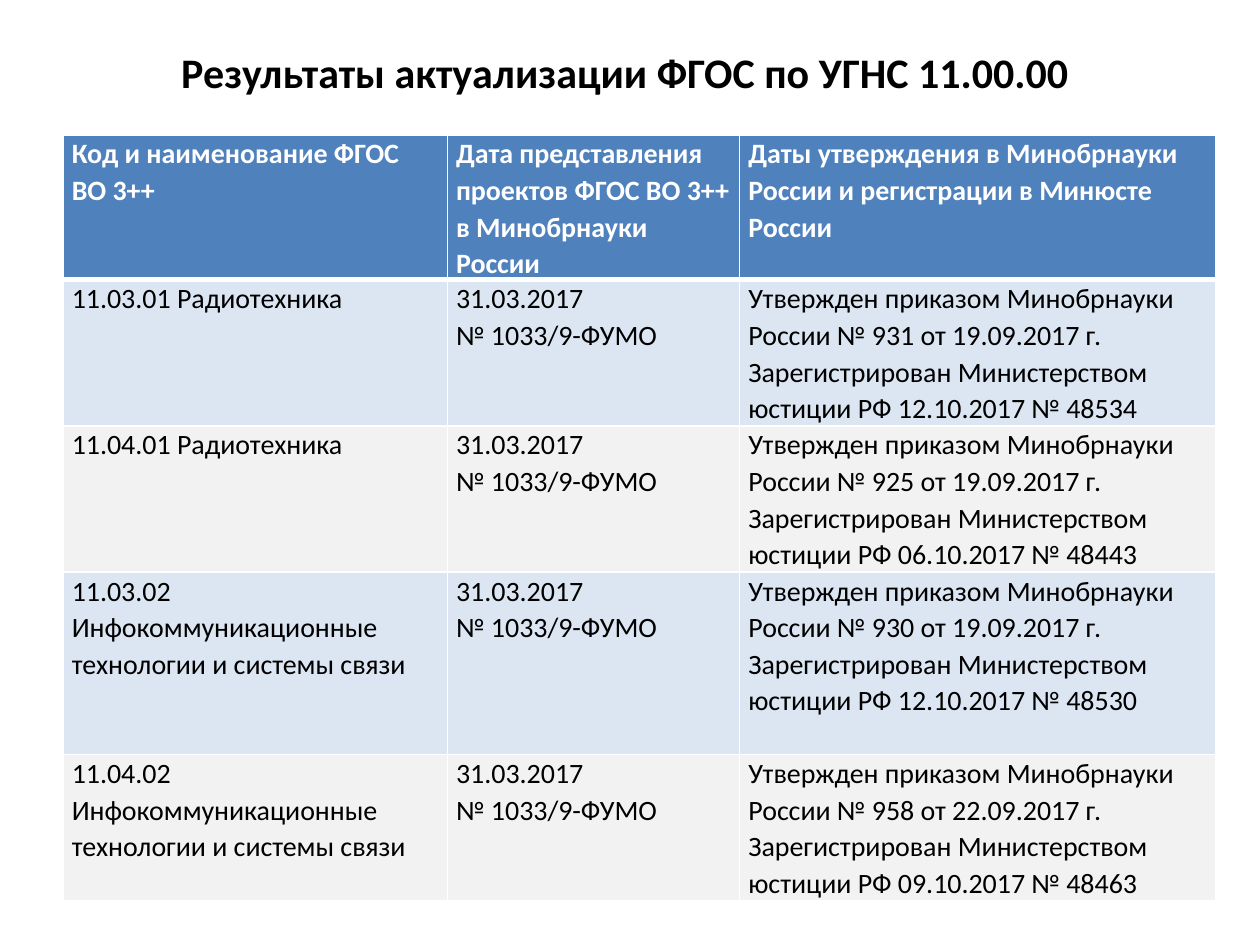
from pptx import Presentation
from pptx.dml.color import RGBColor as Color
from pptx.enum.text import MSO_ANCHOR as Anchor, PP_ALIGN as Align
from pptx.oxml import parse_xml
from pptx.oxml.ns import nsdecls
from pptx.util import Inches, Pt

# Content
TITLE = "Результаты актуализации ФГОС по УГНС 11.00.00"
HEADS = [
    "Код и наименование ФГОС ВО 3++",
    "Дата представления\nпроектов ФГОС ВО 3++ в Минобрнауки России",
    "Даты утверждения в Минобрнауки России и регистрации в Минюсте России",
]
SENT = "31.03.2017\n№ 1033/9-ФУМО"
RADIO = "Радиотехника"
COMMS = "Инфокоммуникационные технологии и системы связи"
# code, name, order, order date, entry date, entry number
ITEMS = [
    ("11.03.01", RADIO, 931, "19.09.2017", "12.10.2017", 48534),
    ("11.04.01", RADIO, 925, "19.09.2017", "06.10.2017", 48443),
    ("11.03.02", COMMS, 930, "19.09.2017", "12.10.2017", 48530),
    ("11.04.02", COMMS, 958, "22.09.2017", "09.10.2017", 48463),
]
WIDTHS = [3.05, 2.32, 3.78]
HEIGHTS = [1.15, 1.16, 1.16, 1.45, 1.16]

THEME = {
    "font": "Calibri", "title": 24, "body": 16,
    "dark": "000000", "light": "FFFFFF", "head": "4F81BD",
    "bands": ["DCE6F2", "F2F2F2"], "thin": 1, "thick": 3,
}


def style(frame, size, color, bold):
    for para in frame.paragraphs:
        for run in para.runs:
            font = run.font
            font.name, font.size, font.bold = THEME["font"], Pt(size), bold
            font.color.rgb = Color.from_string(color)


def edge(cell, side, width):
    cell._tc.get_or_add_tcPr().append(parse_xml(
        f'<a:ln{side} {nsdecls("a")} w="{Pt(width)}"><a:solidFill>'
        f'<a:srgbClr val="{THEME["light"]}"/></a:solidFill></a:ln{side}>'))


def dress(cell, text, row):
    head = row == 0
    # Borders go before the fill; a thick line parts head and body
    thick, thin = THEME["thick"], THEME["thin"]
    tops = {"L": thin, "R": thin,
            "T": thick if row == 1 else thin, "B": thick if head else thin}
    for side, width in tops.items():
        edge(cell, side, width)
    cell.fill.solid()
    fill = THEME["head"] if head else THEME["bands"][(row - 1) % 2]
    cell.fill.fore_color.rgb = Color.from_string(fill)
    cell.margin_left = cell.margin_right = Inches(0.07)
    cell.margin_top = cell.margin_bottom = 0
    cell.text_frame.text = text
    for para in cell.text_frame.paragraphs:
        para.line_spacing = 1.07
    color = THEME["light"] if head else THEME["dark"]
    style(cell.text_frame, THEME["body"], color, head)


def main():
    deck = Presentation()
    deck.slide_width, deck.slide_height = Inches(10), Inches(7.5)
    slide = deck.slides.add_slide(deck.slide_layouts[6])

    # Title
    box = slide.shapes.add_textbox(
        Inches(0.46), Inches(0.3), Inches(9), Inches(0.54))
    frame = box.text_frame
    frame.word_wrap = True
    frame.vertical_anchor = Anchor.MIDDLE
    frame.text = TITLE
    frame.paragraphs[0].alignment = Align.CENTER
    style(frame, THEME["title"], THEME["dark"], True)

    # Table
    rows = [HEADS] + [
        (f"{code} {name}", SENT,
         f"Утвержден приказом Минобрнауки России № {order} от {date} г.\n"
         f"Зарегистрирован Министерством юстиции РФ {entry} № {num}")
        for code, name, order, date, entry, num in ITEMS]
    grid = slide.shapes.add_table(
        len(rows), len(WIDTHS), Inches(0.5), Inches(1.07),
        Inches(sum(WIDTHS)), Inches(sum(HEIGHTS))).table
    for col, width in zip(grid.columns, WIDTHS):
        col.width = Inches(width)
    for line, height in zip(grid.rows, HEIGHTS):
        line.height = Inches(height)
    for r, texts in enumerate(rows):
        for c, text in enumerate(texts):
            dress(grid.cell(r, c), text, r)

    deck.save("out.pptx")


if __name__ == "__main__":
    main()
